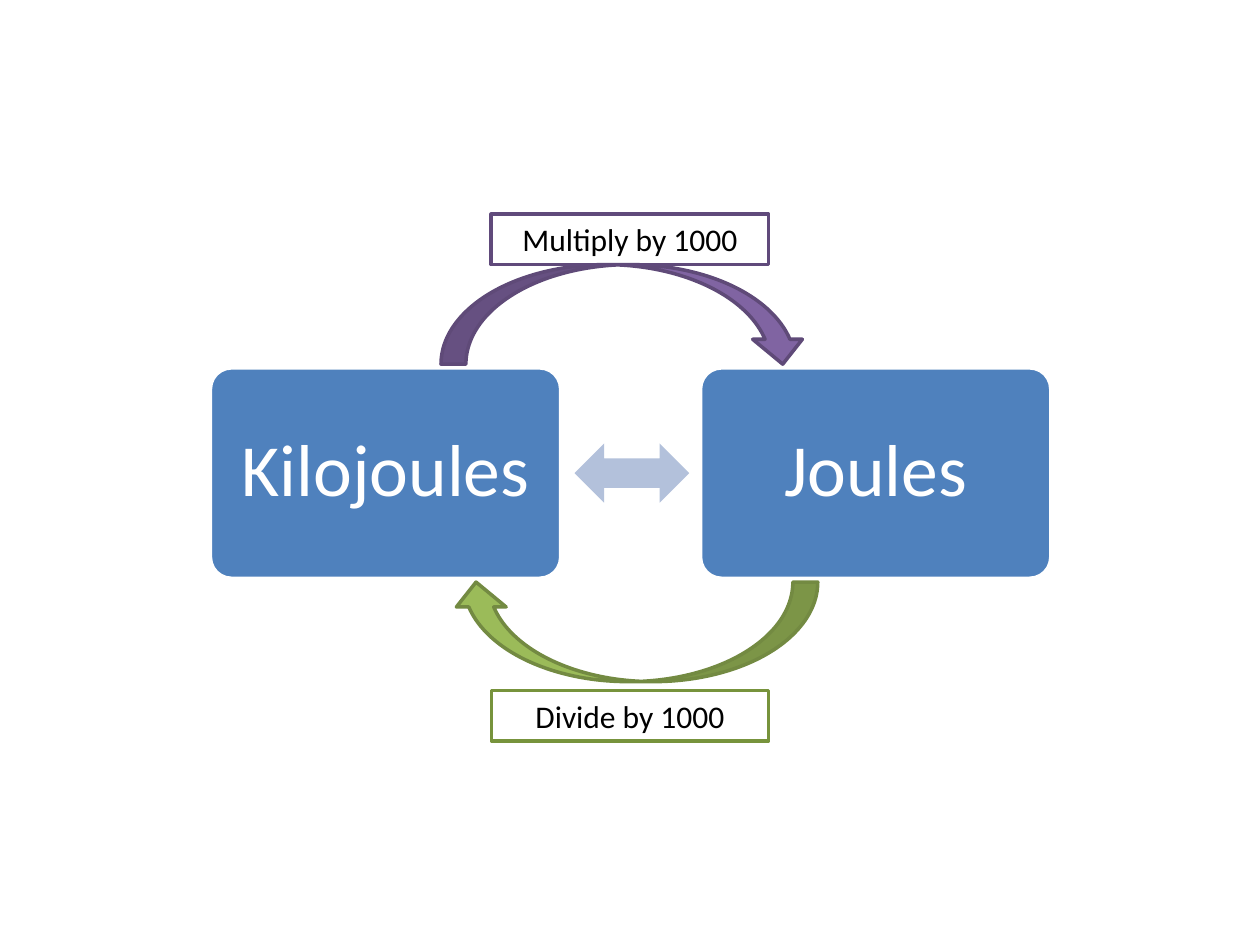
from dataclasses import dataclass

from pptx import Presentation
from pptx.dml.color import RGBColor
from pptx.enum import shapes, text
from pptx.util import Inches, Pt

KIND = shapes.MSO_SHAPE


@dataclass(frozen=True)
class Theme:
    font: str = "Calibri"
    unit_size: float = 42
    label_size: float = 18
    white: str = "FFFFFF"
    black: str = "000000"
    blue: str = "4F81BD"
    pale_blue: str = "B3C1DB"
    purple: str = "8064A2"
    purple_edge: str = "5F4A78"
    purple_frame: str = "604A7B"
    green: str = "9BBB59"
    green_edge: str = "738A42"
    green_frame: str = "77933C"


THEME = Theme()


def apply_format(target, values):
    for name, value in values.items():
        setattr(target, name, value)


def add_figure(page, kind, box, fill=None, line=None, weight=2):
    figure = page.shapes.add_shape(kind, *map(Inches, box))
    figure.shadow.inherit = False
    if fill:
        figure.fill.solid()
        figure.fill.fore_color.rgb = RGBColor.from_string(fill)
    else:
        figure.fill.background()
    if line:
        figure.line.color.rgb = RGBColor.from_string(line)
        figure.line.width = Pt(weight)
    else:
        figure.line.fill.background()
    return figure


def write(figure, words, size, color, frame_format, para_format):
    frame = figure.text_frame
    apply_format(frame, {
        "word_wrap": True,
        "vertical_anchor": text.MSO_ANCHOR.MIDDLE,
        **frame_format,
    })
    para = frame.paragraphs[0]
    apply_format(para, {"alignment": text.PP_ALIGN.CENTER, **para_format})
    span = para.add_run()
    span.text = words
    apply_format(span.font, {"name": THEME.font, "size": Pt(size)})
    span.font.color.rgb = RGBColor.from_string(color)


def add_unit(page, box, words):
    figure = add_figure(page, KIND.ROUNDED_RECTANGLE, box, THEME.blue, THEME.white)
    figure.adjustments[0] = 0.1
    sides = ("left", "top", "right", "bottom")
    margins = {f"margin_{side}": Inches(0.17) for side in sides}
    write(figure, words, THEME.unit_size, THEME.white, margins, {"line_spacing": 0.9})


def add_units(page, box):
    left, top, width, height = box
    unit_width, arrow_width, arrow_height = 2.78, 0.91, 0.47
    add_unit(page, (left, top, unit_width, height), "Kilojoules")
    arrow_top = top + (height - arrow_height) / 2
    arrow_box = (left + unit_width + 0.11, arrow_top, arrow_width, arrow_height)
    add_figure(page, KIND.LEFT_RIGHT_ARROW, arrow_box, THEME.pale_blue)
    add_unit(page, (left + width - unit_width, top, unit_width, height), "Joules")


def add_curve(page, box, fill, line, rotation=0):
    figure = add_figure(page, KIND.CURVED_DOWN_ARROW, box, fill, line)
    figure.rotation = rotation


def add_label(page, box, words, line, fill=None, weight=2):
    figure = add_figure(page, KIND.RECTANGLE, box, fill, line, weight)
    growth = {"auto_size": text.MSO_AUTO_SIZE.SHAPE_TO_FIT_TEXT}
    write(figure, words, THEME.label_size, THEME.black, growth, {})


def build_conversion(page):
    add_units(page, (1.67, 2.92, 6.67, 1.67))
    add_curve(page, (3.5, 2.1, 2.91, 0.79), THEME.purple, THEME.purple_edge)
    add_curve(page, (3.58, 4.62, 2.91, 0.79), THEME.green, THEME.green_edge, 180)
    add_label(page, (3.9, 5.48, 2.2, 0.4), "Divide by 1000", THEME.green_frame, THEME.white)
    add_label(page, (3.9, 1.7, 2.2, 0.4), "Multiply by 1000", THEME.purple_frame, weight=2.25)


def main():
    deck = Presentation()
    apply_format(deck, {"slide_width": Inches(10), "slide_height": Inches(7.5)})
    build_conversion(deck.slides.add_slide(deck.slide_layouts[6]))
    deck.save("out.pptx")


if __name__ == "__main__":
    main()
